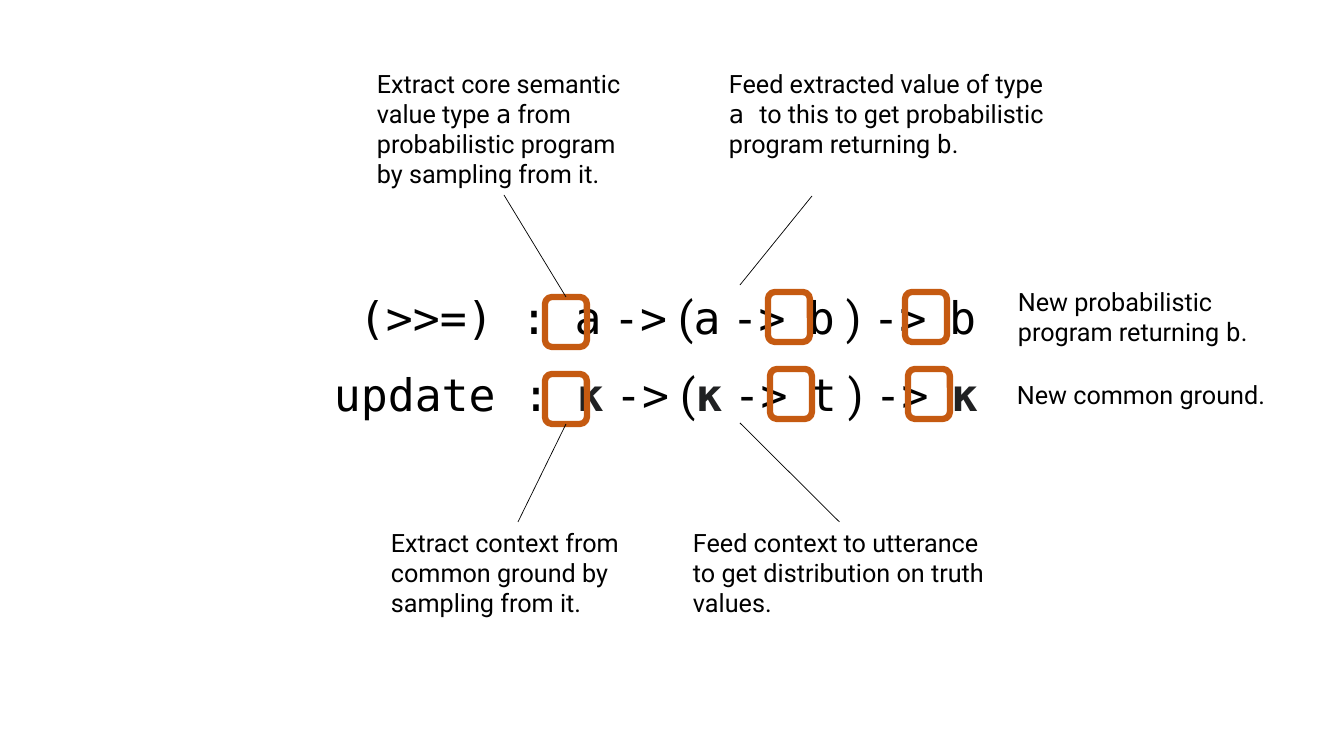
from lxml.etree import SubElement
from pptx import Presentation
from pptx.dml.color import RGBColor
from pptx.enum.shapes import MSO_CONNECTOR as LineKind, MSO_SHAPE as Preset
from pptx.enum.text import MSO_AUTO_SIZE as AutoSize
from pptx.oxml.ns import qn
from pptx.util import Emu, Pt

BLACK = RGBColor(0x00, 0x00, 0x00)
WHITE = RGBColor(0xFF, 0xFF, 0xFF)
CHARCOAL = RGBColor(0x20, 0x21, 0x22)
ORANGE = RGBColor(0xC5, 0x5A, 0x11)
PX = 914400 / 100.8
TOP, BOTTOM = 0, 2

PROSE = {"name": "Roboto", "bold": False}, BLACK
CODE = {"name": "DejaVu Sans Mono", "bold": False}, BLACK
KAPPA = {"name": "DejaVu Sans Mono", "bold": True}, CHARCOAL

# Notes: box in px, runs
NOTES = {
    "extract value": ((367, 63, 274, 132), [
        ("Extract core semantic value type ", PROSE), ("a", CODE),
        (" from probabilistic program by sampling from it.", PROSE)]),
    "feed value": ((719, 63, 335, 132), [
        ("Feed extracted value of type ", PROSE), ("a ", CODE),
        ("to this to get probabilistic program returning ", PROSE),
        ("b", CODE), (".", PROSE)]),
    "extract context": ((381, 522, 274, 102), [
        ("Extract context from common ground by sampling from it.", PROSE)]),
    "feed context": ((683, 522, 313, 102), [
        ("Feed context to utterance to get distribution on truth values.", PROSE)]),
    "new program": ((1008, 281, 304, 72), [
        ("New probabilistic program returning ", PROSE), ("b", CODE), (".", PROSE)]),
    "new ground": ((1007, 374, 304, 40), [("New common ground.", PROSE)]),
}

# Type signatures: box in px, opening, argument, result and their styles,
# left and top of each monad frame
SIGNATURES = {
    "bind": ((322, 285, 838, 65), " (>>=) : ", ("a", CODE), ("b", CODE), ("b", CODE),
             [(545, 297), (768, 292), (905, 292)]),
    "update": ((297, 362, 838, 65), " update : ", ("κ", KAPPA), ("t", CODE), ("κ", KAPPA),
               [(545, 374), (770, 369), (908, 369)]),
}
FRAME_SIZE = 42, 50
ARROW = "->", CODE

# Pointers: start and end, each a (part, side) to join or a point in px
POINTERS = [
    (("extract value", BOTTOM), ("bind", TOP)),
    ((812, 196), (740, 285)),
    (("extract context", TOP), ("update", BOTTOM)),
    (("feed context", TOP), (740, 423)),
]


def px(*lengths):
    return [Emu(round(length * PX)) for length in lengths]


prs = Presentation()
prs.slide_width, prs.slide_height = px(1344, 756)
slide = prs.slides.add_slide(prs.slide_layouts[6])
shapes = slide.shapes


def add_text(box, runs, size):
    text_box = shapes.add_textbox(*px(*box))
    frame = text_box.text_frame
    frame.word_wrap = True
    frame.auto_size = AutoSize.SHAPE_TO_FIT_TEXT
    for text, (font_format, color) in runs:
        run = frame.paragraphs[0].add_run()
        run.text = text
        for key, value in {**font_format, "size": Pt(size)}.items():
            setattr(run.font, key, value)
        run.font.color.rgb = color
    return text_box


def add_frame(left, top):
    frame = shapes.add_shape(Preset.ROUNDED_RECTANGLE, *px(left, top, *FRAME_SIZE))
    frame.shadow.inherit = False
    frame.fill.background()
    frame.line.color.rgb = ORANGE
    frame.line.width = Pt(4.5)
    return frame


# Explanatory notes
joints = {}
for part, (box, runs) in NOTES.items():
    note = add_text(box, runs, 18)
    note.fill.solid()
    note.fill.fore_color.rgb = WHITE
    joints[part] = note

# Signatures with narrow gaps and framed monads; pointers join the first frame
for part, (box, opening, argument, inner, result, corners) in SIGNATURES.items():
    add_text(box, [
        (opening, CODE), argument, (" ", PROSE), ARROW, (" (", PROSE),
        argument, (" ", PROSE), ARROW, ("  ", PROSE), inner, (" ) ", PROSE),
        ARROW, ("  ", PROSE), result], 32)
    joints[part] = [add_frame(*corner) for corner in corners][0]

# Pointers from notes to signatures
for start, end in POINTERS:
    points = [(0, 0) if place[0] in joints else place for place in (start, end)]
    pointer = shapes.add_connector(LineKind.STRAIGHT, *px(*points[0], *points[1]))
    for place, join in ((start, pointer.begin_connect), (end, pointer.end_connect)):
        if place[0] in joints:
            join(joints[place[0]], place[1])
    pointer.line.color.rgb = BLACK
    pointer.line.width = Pt(0.5)
    SubElement(pointer._element.spPr, qn("a:effectLst"))

prs.save("out.pptx")
